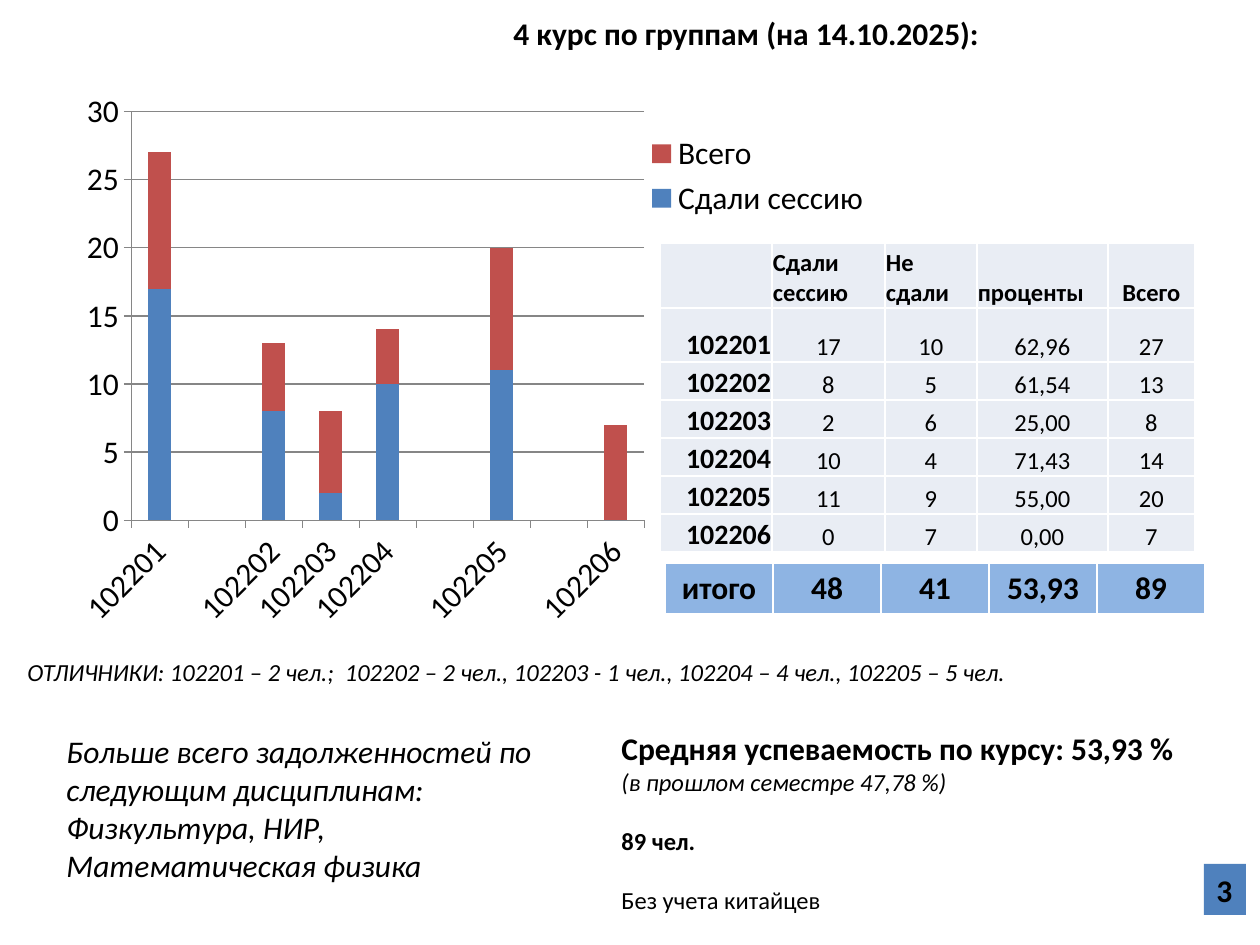
import pptx
import pptx.chart.data
import pptx.dml.color
import pptx.enum.chart
import pptx.enum.shapes
import pptx.enum.text
import pptx.oxml
import pptx.oxml.ns
import pptx.util

RGB = pptx.dml.color.RGBColor
BLACK = RGB(0x00, 0x00, 0x00)
BLUE = RGB(0x4F, 0x81, 0xBD)
RED = RGB(0xC0, 0x50, 0x4D)
GRID = RGB(0x86, 0x86, 0x86)
PALE = RGB(0xE9, 0xED, 0xF4)
SKY = RGB(0x8E, 0xB4, 0xE3)
FONT = "Calibri"
ALIGN = pptx.enum.text.PP_ALIGN
ANCHOR = pptx.enum.text.MSO_ANCHOR
NS = pptx.oxml.ns.nsdecls
QN = pptx.oxml.ns.qn

GROUPS = [
    ("102201", 17, 10, "62,96", 27),
    ("102202", 8, 5, "61,54", 13),
    ("102203", 2, 6, "25,00", 8),
    ("102204", 10, 4, "71,43", 14),
    ("102205", 11, 9, "55,00", 20),
    ("102206", 0, 7, "0,00", 7),
]
HEADER = ("", "Сдали сессию", "Не сдали", "проценты", "Всего")
TOTAL = ("итого", "48", "41", "53,93", "89")
GAP_AFTER = ("102201", "102204", "102205")


def px(n):
    """Turn pixels into EMU."""
    return pptx.util.Emu(round(n * 914400 / 126))


def box(*lengths):
    """Turn left, top, width and height in pixels into EMU."""
    return [px(n) for n in lengths]


def set_font(font, size, **fmt):
    """Apply the common font with a size and extra format values."""
    for name, value in {"name": FONT, "size": pptx.util.Pt(size), **fmt}.items():
        setattr(font, name, value)
    font.color.rgb = BLACK


def add_paragraphs(tf, paragraphs):
    """Write (text, size, format, space before) entries into a text frame."""
    for i, (text, size, fmt, space) in enumerate(paragraphs):
        p = tf.paragraphs[0] if i == 0 else tf.add_paragraph()
        p.space_before = pptx.util.Pt(space)
        r = p.add_run()
        r.text = text
        set_font(r.font, size, **fmt)


def add_text(s, place, paragraphs, wrap=True):
    """Add a text box."""
    tf = s.shapes.add_textbox(*box(*place)).text_frame
    tf.word_wrap = wrap
    add_paragraphs(tf, paragraphs)


def add_number(s, place, text):
    """Add the filled rectangle that holds the slide number."""
    sp = s.shapes.add_shape(pptx.enum.shapes.MSO_SHAPE.RECTANGLE, *box(*place))
    sp.shadow.inherit = False
    sp.fill.solid()
    sp.fill.fore_color.rgb = BLUE
    sp.line.fill.background()
    tf = sp.text_frame
    tf.word_wrap = False
    add_paragraphs(tf, [(text, 18, {"bold": True}, 0)])
    tf.paragraphs[0].alignment = ALIGN.LEFT


def set_borders(cell):
    """Draw thin white lines around a cell."""
    tc_pr = cell._tc.get_or_add_tcPr()
    for i, side in enumerate(("lnL", "lnR", "lnT", "lnB")):
        tc_pr.insert(i, pptx.oxml.parse_xml(
            f'<a:{side} {NS("a")} w="12700"><a:solidFill>'
            f'<a:srgbClr val="FFFFFF"/></a:solidFill></a:{side}>'))


def fill_cell(cell, text, fill, size, bold, align):
    """Write and format one cell."""
    cell.fill.solid()
    cell.fill.fore_color.rgb = fill
    p = cell.text_frame.paragraphs[0]
    p.alignment = align
    if text:
        r = p.add_run()
        r.text = text
        set_font(r.font, size, bold=bold)
    set_borders(cell)


def add_table(s, left, top, widths, heights):
    """Add an unstyled table with the given column widths and row heights."""
    place = box(left, top, sum(widths), sum(heights))
    table = s.shapes.add_table(len(heights), len(widths), *place).table
    table.first_row = table.horz_banding = False
    for column, width in zip(table.columns, widths):
        column.width = px(width)
    for row, height in zip(table.rows, heights):
        row.height = px(height)
    return table


def add_group_table(s):
    """Add the table of results by group."""
    table = add_table(s, 660, 243, [112, 113, 92, 131, 87], [65, 54] + [38] * 5)
    for i, row in enumerate([HEADER] + GROUPS):
        for j, value in enumerate(row):
            if i == 0:
                style = (14, True, ALIGN.CENTER if j == 4 else ALIGN.LEFT)
            elif j == 0:
                style = (16, True, ALIGN.RIGHT)
            else:
                style = (14, False, ALIGN.CENTER)
            cell = table.cell(i, j)
            fmt = {"margin_left": px(1), "margin_right": px(1), "margin_top": px(1),
                   "margin_bottom": 0, "vertical_anchor": ANCHOR.BOTTOM}
            for name, setting in fmt.items():
                setattr(cell, name, setting)
            fill_cell(cell, str(value), PALE, *style)


def add_total_table(s):
    """Add the one-row table of totals."""
    table = add_table(s, 665, 563, [108] * 5, [48])
    for j, value in enumerate(TOTAL):
        fill_cell(table.cell(0, j), value, SKY, 18, True, ALIGN.CENTER)


def set_layout(parent, index, target, **fractions):
    """Place a chart part by fractions of the chart area."""
    for old in parent.findall(QN("c:layout")):
        parent.remove(old)
    modes = '<c:xMode val="edge"/><c:yMode val="edge"/>'
    values = "".join(f'<c:{k} val="{v}"/>' for k, v in fractions.items())
    parent.insert(index, pptx.oxml.parse_xml(
        f'<c:layout {NS("c")}><c:manualLayout>{target}{modes}{values}'
        '</c:manualLayout></c:layout>'))


def add_chart(s):
    """Add the stacked column chart of passed and remaining students."""
    names, passed, failed = [], [], []
    for group, ok, bad, _, _ in GROUPS:
        gap = group in GAP_AFTER
        names += [group] + [""] * gap
        passed += [ok] + [None] * gap
        failed += [bad] + [None] * gap
    data = pptx.chart.data.CategoryChartData()
    data.categories = names
    data.add_series("Сдали сессию", passed)
    data.add_series("Всего", failed)
    kind = pptx.enum.chart.XL_CHART_TYPE.COLUMN_STACKED
    chart = s.shapes.add_chart(kind, *box(64, 78, 841, 560), data).chart
    chart.has_title = False
    set_font(chart.font, 18)
    plot = chart.plots[0]
    plot.gap_width, plot.overlap, plot.vary_by_categories = 150, 100, False
    for series, color in zip(plot.series, (BLUE, RED)):
        series.format.fill.solid()
        series.format.fill.fore_color.rgb = color
    axis = chart.value_axis
    axis.minimum_scale, axis.maximum_scale, axis.major_unit = 0, 30, 5
    for line in (axis.format.line, axis.major_gridlines.format.line,
                 chart.category_axis.format.line):
        line.color.rgb = GRID
        line.width = pptx.util.Pt(0.75)
    set_font(chart.category_axis.tick_labels.font, 18)
    body = chart.category_axis._element.find(QN("c:txPr")).find(QN("a:bodyPr"))
    body.set("rot", "-2700000")
    chart.has_legend = True
    chart.legend.position = pptx.enum.chart.XL_LEGEND_POSITION.RIGHT
    chart.legend.include_in_layout = False
    set_layout(chart._chartSpace.chart.plotArea, 0, '<c:layoutTarget val="inner"/>',
               x=0.08, y=0.06, w=0.61, h=0.73)
    set_layout(chart.legend._element, 1, "", x=0.69, y=0.09, w=0.27, h=0.17)


def main():
    """Build and save the slide."""
    prs = pptx.Presentation()
    prs.slide_width, prs.slide_height = px(1260), px(945)
    s = prs.slides.add_slide(prs.slide_layouts[6])
    bold, italic = {"bold": True}, {"italic": True}
    add_chart(s)
    add_text(s, (501, 8, 496, 50),
             [("4 курс по группам (на 14.10.2025):", 18, bold, 0)], wrap=False)
    add_text(s, (15, 651, 1189, 72),
             [("ОТЛИЧНИКИ: 102201 – 2 чел.;  102202 – 2 чел., 102203 - 1 чел., "
               "102204 – 4 чел., 102205 – 5 чел.", 14, italic, 0)])
    add_text(s, (609, 723, 597, 199),
             [("Средняя успеваемость по курсу: 53,93 %", 18, bold, 0),
              ("(в прошлом семестре 47,78 %)", 14, italic, 0),
              ("89 чел.", 14, bold, 17),
              ("Без учета китайцев", 14, {}, 17)], wrap=False)
    add_group_table(s)
    add_number(s, (1204, 864, 42, 51), "3")
    add_total_table(s)
    add_text(s, (54, 726, 513, 165),
             [("Больше всего задолженностей по следующим дисциплинам:", 18, italic, 0),
              ("Физкультура, НИР, Математическая физика", 18, italic, 0)])
    prs.save("out.pptx")


if __name__ == "__main__":
    main()
